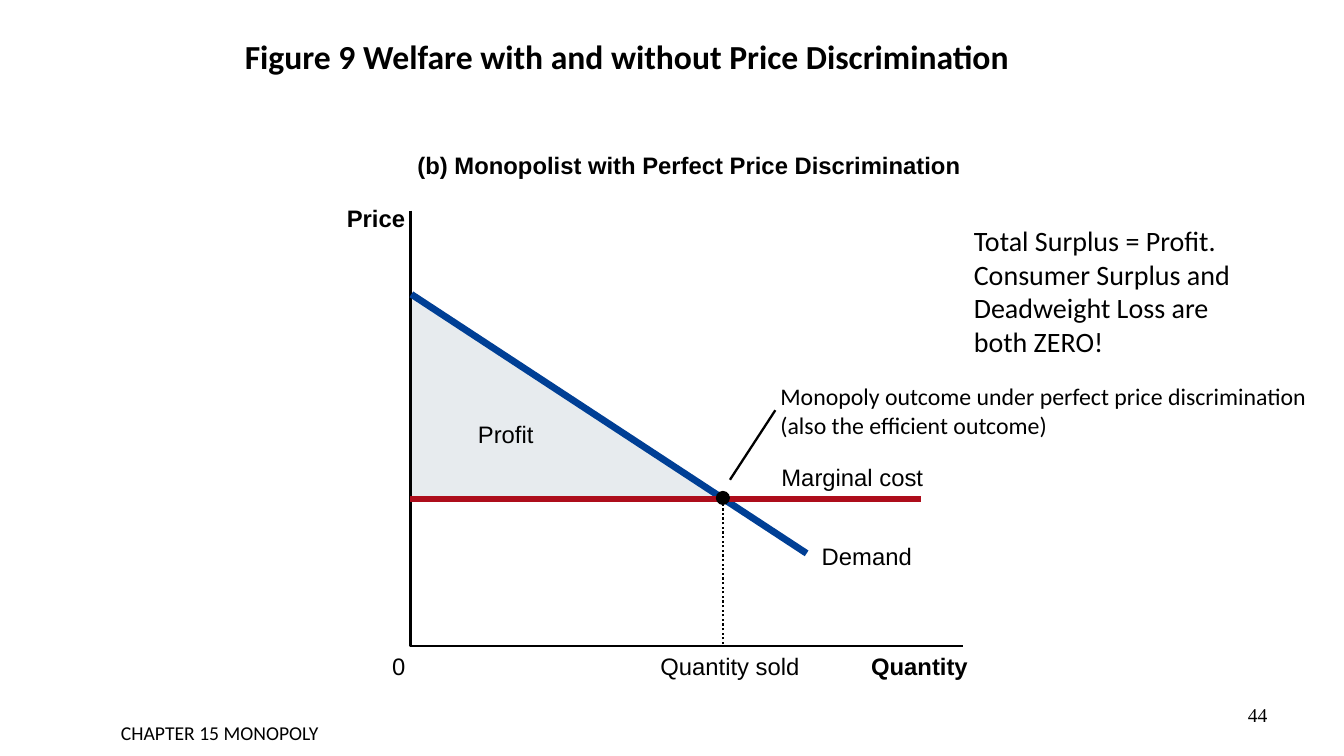
import dataclasses

import pptx
import pptx.dml.color
import pptx.enum.dml
import pptx.enum.shapes
import pptx.enum.text
import pptx.oxml.ns
import pptx.util
from lxml import etree
from pptx.util import Inches

ALIGN = pptx.enum.text.PP_ALIGN
ANCHOR = pptx.enum.text.MSO_ANCHOR


@dataclasses.dataclass(frozen=True)
class Theme:
    ink: str = "000000"
    demand: str = "003F95"
    cost: str = "AD0D1B"
    profit: str = "E7EBEE"
    sans: str = "Arial"
    body: str = "Calibri"
    serif: str = "Times New Roman"
    title_size: int = 24
    note_size: int = 20
    label_size: int = 17
    footer_size: int = 14
    thin: float = 1.63
    thick: float = 4.88


THEME = Theme()

# Key coordinates of the diagram, in inches
AXIS_X, AXIS_TOP, AXIS_Y, AXIS_RIGHT = 4.07, 2.09, 6.41, 9.55
SOLD_X, COST_Y = 7.17, 4.95
PROFIT_TOP, PROFIT_BOTTOM = 2.94, 4.92
DOT = 0.14
LABEL_HEIGHT, AXIS_LABEL_Y = 0.29, 6.47


def color(code):
    return pptx.dml.color.RGBColor.from_string(code)


def add_text(slide, place, lines, size, font, bold=False, align=ALIGN.LEFT,
             anchor=ANCHOR.TOP, spacing=None):
    """Add a wrapping text box with one paragraph per line."""
    box = slide.shapes.add_textbox(*map(Inches, place))
    frame = box.text_frame
    frame.word_wrap = True
    frame.vertical_anchor = anchor
    for index, line in enumerate(lines):
        para = frame.paragraphs[0] if index == 0 else frame.add_paragraph()
        para.alignment = align
        if spacing:
            para.line_spacing = spacing
        span = para.add_run()
        span.text = line
        span.font.size = pptx.util.Pt(size)
        span.font.name = font
        span.font.bold = bold
        span.font.color.rgb = color(THEME.ink)
    return frame


def add_label(slide, left, top, width, *lines, bold=False, font=THEME.sans):
    """Add a diagram label without margins or wrapping."""
    place = (left, top, width, LABEL_HEIGHT * len(lines))
    frame = add_text(slide, place, lines, THEME.label_size, font, bold)
    frame.word_wrap = False
    frame.margin_left = frame.margin_right = 0
    frame.margin_top = frame.margin_bottom = 0


def add_line(slide, start, end, line_color, width, dash=None):
    line = slide.shapes.add_connector(
        pptx.enum.shapes.MSO_CONNECTOR.STRAIGHT, *map(Inches, start + end))
    line.line.color.rgb = color(line_color)
    line.line.width = pptx.util.Pt(width)
    if dash:
        line.line.dash_style = dash
    properties = line._element.spPr
    etree.SubElement(properties, pptx.oxml.ns.qn("a:effectLst"))


def add_outline(slide, points, fill=None, line_color=None):
    """Draw a filled closed shape, or an open line when there is no fill."""
    corners = [tuple(map(Inches, point)) for point in points]
    builder = slide.shapes.build_freeform(*corners[0])
    builder.add_line_segments(corners[1:], close=fill is not None)
    shape = builder.convert_to_shape()
    shape.shadow.inherit = False
    if fill:
        shape.fill.solid()
        shape.fill.fore_color.rgb = color(fill)
    else:
        shape.fill.background()
    if line_color:
        shape.line.color.rgb = color(line_color)
        shape.line.width = pptx.util.Pt(THEME.thin)
    else:
        shape.line.fill.background()


def add_dot(slide, center_x, center_y):
    dot = slide.shapes.add_shape(
        pptx.enum.shapes.MSO_SHAPE.OVAL, Inches(center_x - DOT / 2),
        Inches(center_y - DOT / 2), Inches(DOT), Inches(DOT))
    dot.shadow.inherit = False
    dot.fill.solid()
    dot.fill.fore_color.rgb = color(THEME.ink)
    dot.line.fill.background()


def add_diagram(slide):
    # Profit area and axes
    add_outline(slide, [(AXIS_X, PROFIT_TOP), (SOLD_X, PROFIT_BOTTOM),
                        (AXIS_X, PROFIT_BOTTOM)], fill=THEME.profit)
    add_label(slide, 4.74, 4.16, 0.56, "Profit")
    add_outline(slide, [(AXIS_X, AXIS_TOP), (AXIS_X, AXIS_Y),
                        (AXIS_RIGHT, AXIS_Y)], line_color=THEME.ink)
    add_label(slide, 4.14, 1.49, 5.44,
              "(b) Monopolist with Perfect Price Discrimination", bold=True)
    add_label(slide, 3.44, 2.02, 0.59, "Price", bold=True)
    add_label(slide, 3.89, AXIS_LABEL_Y, 0.13, "0")
    add_label(slide, 8.64, AXIS_LABEL_Y, 0.97, "Quantity", bold=True)

    # Demand and marginal cost
    add_line(slide, (4.08, 2.92), (8, 5.49), THEME.demand, THEME.thick)
    add_label(slide, 8.15, 5.37, 0.9, "Demand")
    add_line(slide, (AXIS_X, COST_Y), (9.13, COST_Y), THEME.cost, THEME.thick)
    add_label(slide, 7.75, 4.59, 1.42, "Marginal cost")

    # Quantity sold
    add_line(slide, (SOLD_X, 6.39), (SOLD_X, PROFIT_BOTTOM), THEME.ink,
             THEME.thin, pptx.enum.dml.MSO_LINE.ROUND_DOT)
    add_dot(slide, SOLD_X, 4.94)
    add_label(slide, 6.55, AXIS_LABEL_Y, 1.4, "Quantity sold")

    # Outcome callout
    add_line(slide, (7.24, 4.76), (7.69, 4.07), THEME.ink, THEME.thin)
    add_label(slide, 7.74, 3.79, 5.26,
              "Monopoly outcome under perfect price discrimination",
              "(also the efficient outcome)", font=THEME.body)


def main():
    deck = pptx.Presentation()
    deck.slide_width, deck.slide_height = Inches(13.33), Inches(7.5)
    slide = deck.slides.add_slide(deck.slide_layouts[6])

    # Title
    add_text(slide, (2.33, 0.22, 9, 0.75),
             ["Figure 9 Welfare with and without Price Discrimination"],
             THEME.title_size, THEME.body, bold=True, anchor=ANCHOR.MIDDLE,
             spacing=0.8)

    add_diagram(slide)

    # Footer and side note
    add_text(slide, (11.86, 6.92, 0.81, 0.52), ["44"], THEME.footer_size,
             THEME.serif, align=ALIGN.RIGHT)
    add_text(slide, (0.32, 7.1, 3.72, 0.33), ["CHAPTER 15 MONOPOLY"],
             THEME.footer_size, THEME.body, align=ALIGN.CENTER)
    add_text(slide, (9.56, 2.17, 3.11, 1.45),
             ["Total Surplus = Profit. Consumer Surplus and Deadweight Loss "
              "are both ZERO!"], THEME.note_size, THEME.body)

    deck.save("out.pptx")


if __name__ == "__main__":
    main()
